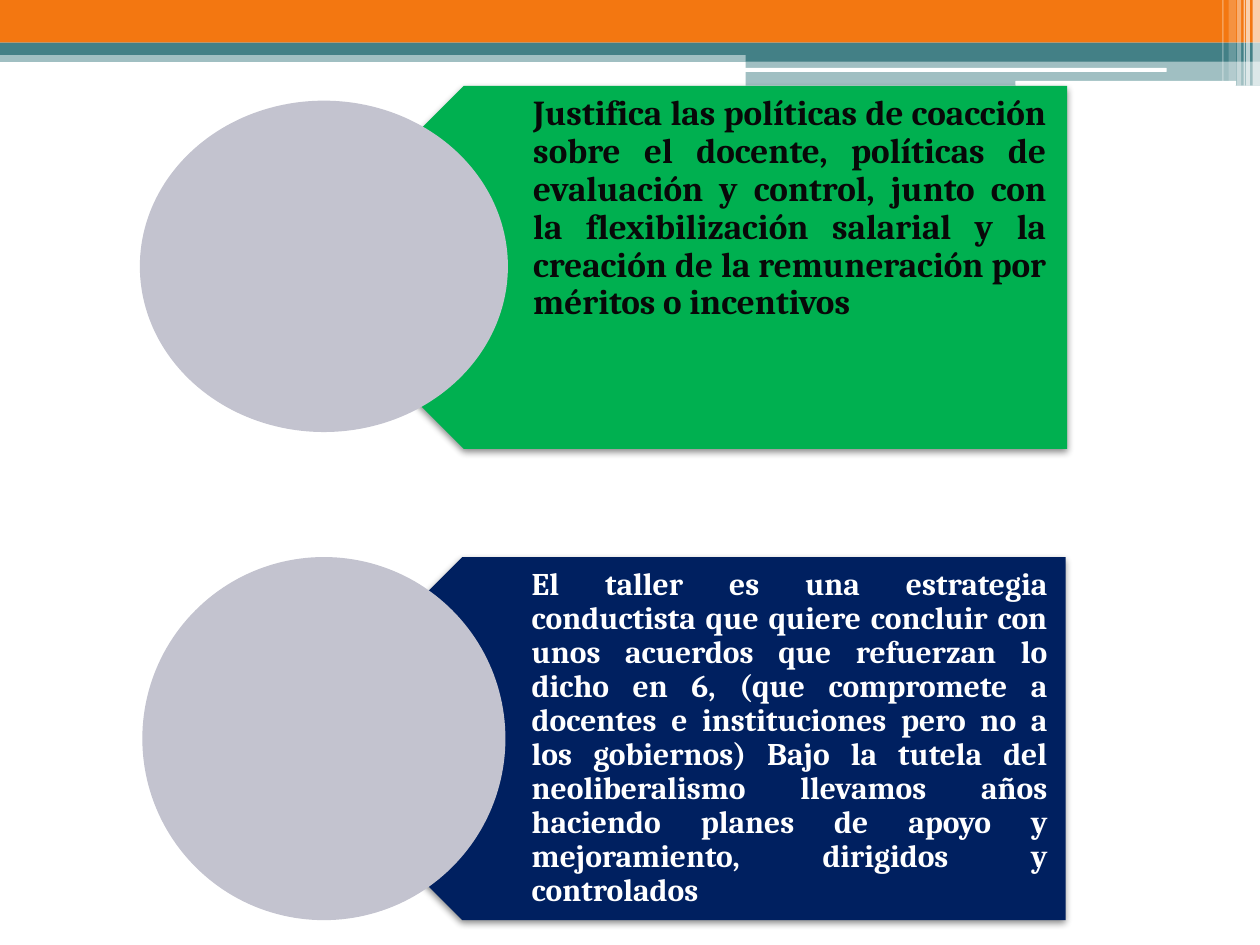
"""Build a slide with two arrow cards under a layered header band."""
from lxml import etree
from pptx import Presentation
from pptx.dml.color import RGBColor
from pptx.enum import shapes, text
from pptx.oxml.ns import qn
from pptx.util import Cm, Pt

ORANGE = RGBColor(0xF3, 0x77, 0x11)
TEAL = RGBColor(0x43, 0x80, 0x86)
WHITE = RGBColor(0xFF, 0xFF, 0xFF)
GREEN = RGBColor(0x00, 0xB0, 0x50)
NAVY = RGBColor(0x00, 0x20, 0x60)
GREY = RGBColor(0xC3, 0xC3, 0xCF)
BLACK = RGBColor(0x08, 0x08, 0x08)

RECT = shapes.MSO_SHAPE.RECTANGLE
ROUND = shapes.MSO_SHAPE.ROUNDED_RECTANGLE
TOP, MIDDLE = text.MSO_ANCHOR.TOP, text.MSO_ANCHOR.MIDDLE

prs = Presentation()
prs.slide_width, prs.slide_height = Cm(25.4), Cm(19.05)
s = prs.slides.add_slide(prs.slide_layouts[6])


def add_shape(kind, box, color, alpha=100):
    sp = s.shapes.add_shape(kind, *map(Cm, box))
    sp.shadow.inherit = False
    sp.fill.solid()
    sp.fill.fore_color.rgb = color
    sp.line.fill.background()
    if alpha < 100:
        clr = sp.fill._xPr.find(qn("a:solidFill"))[0]
        etree.SubElement(clr, qn("a:alpha"), val=str(alpha * 1000))
    return sp


def add_text(content, box, insets, size, color, anchor):
    sp = s.shapes.add_textbox(*map(Cm, box))
    tf = sp.text_frame
    tf.word_wrap = True
    tf.vertical_anchor = anchor
    tf.margin_left, tf.margin_top, tf.margin_right, tf.margin_bottom = map(Cm, insets)
    p = tf.paragraphs[0]
    p.alignment = text.PP_ALIGN.JUSTIFY
    p.line_spacing = 0.9
    r = p.add_run()
    r.text = content
    r.font.name, r.font.size, r.font.bold = "Cambria", Pt(size), True
    r.font.color.rgb = color


bands = [
    (RECT, (0, 1.02, 25.4, 0.23), TEAL, 50),
    (RECT, (0, 0, 25.4, 0.86), ORANGE, 100),
    (RECT, (0, 0.86, 25.4, 0.25), TEAL, 100),
    (RECT, (15.03, 0.99, 10.37, 0.25), TEAL, 100),
    (RECT, (15.03, 1.23, 10.37, 0.5), TEAL, 50),
    (ROUND, (15.01, 1.37, 8.51, 0.08), WHITE, 100),
    (ROUND, (20.47, 1.63, 4.45, 0.1), WHITE, 100),
]
for band in bands:
    add_shape(*band)

stripes = [
    (25.25, 0.15, 1.73, 65),
    (25.12, 0.08, 1.73, 65),
    (25.07, 0.03, 1.73, 60),
    (24.94, 0.08, 1.73, 40),
    (24.77, 0.15, 1.63, 20),
    (24.64, 0.03, 1.63, 30),
]
for left, width, height, alpha in stripes:
    add_shape(RECT, (left, 0, width, height), WHITE, alpha)

cards = [
    ("Justifica las políticas de coacción sobre el docente, políticas de evaluación "
     "y control, junto con la flexibilización salarial y la creación de la "
     "remuneración por méritos o incentivos",
     5.69, 1.73, GREEN, BLACK, 20, TOP, (3.23, 0.2, 0.41, 0.2),
     (2.82, 2.03, 7.42, 6.68)),
    ("El taller es una estrategia conductista que quiere concluir con unos acuerdos "
     "que refuerzan lo dicho en 6, (que compromete a docentes e instituciones pero "
     "no a los gobiernos) Bajo la tutela del neoliberalismo llevamos años haciendo "
     "planes de apoyo y mejoramiento, dirigidos y controlados",
     5.66, 11.23, NAVY, WHITE, 18, MIDDLE, (3.23, 0.18, 0.36, 0.18),
     (2.87, 11.23, 7.32, 7.32)),
]
for content, left, top, fill, color, size, anchor, insets, circle in cards:
    sp = add_shape(shapes.MSO_SHAPE.PENTAGON, (left, top, 15.82, 7.32), fill)
    sp.rotation = 180
    effects = sp._element.spPr.find(qn("a:effectLst"))
    shadow = etree.SubElement(effects, qn("a:outerShdw"), blurRad=str(Pt(4)),
                              dist=str(Pt(2)), dir="5400000", rotWithShape="0")
    clr = etree.SubElement(shadow, qn("a:srgbClr"), val="000000")
    etree.SubElement(clr, qn("a:alpha"), val="45000")
    add_text(content, (left + 1.83, top, 13.99, 7.32), insets, size, color, anchor)
    add_shape(shapes.MSO_SHAPE.OVAL, circle, GREY)

prs.save("out.pptx")
